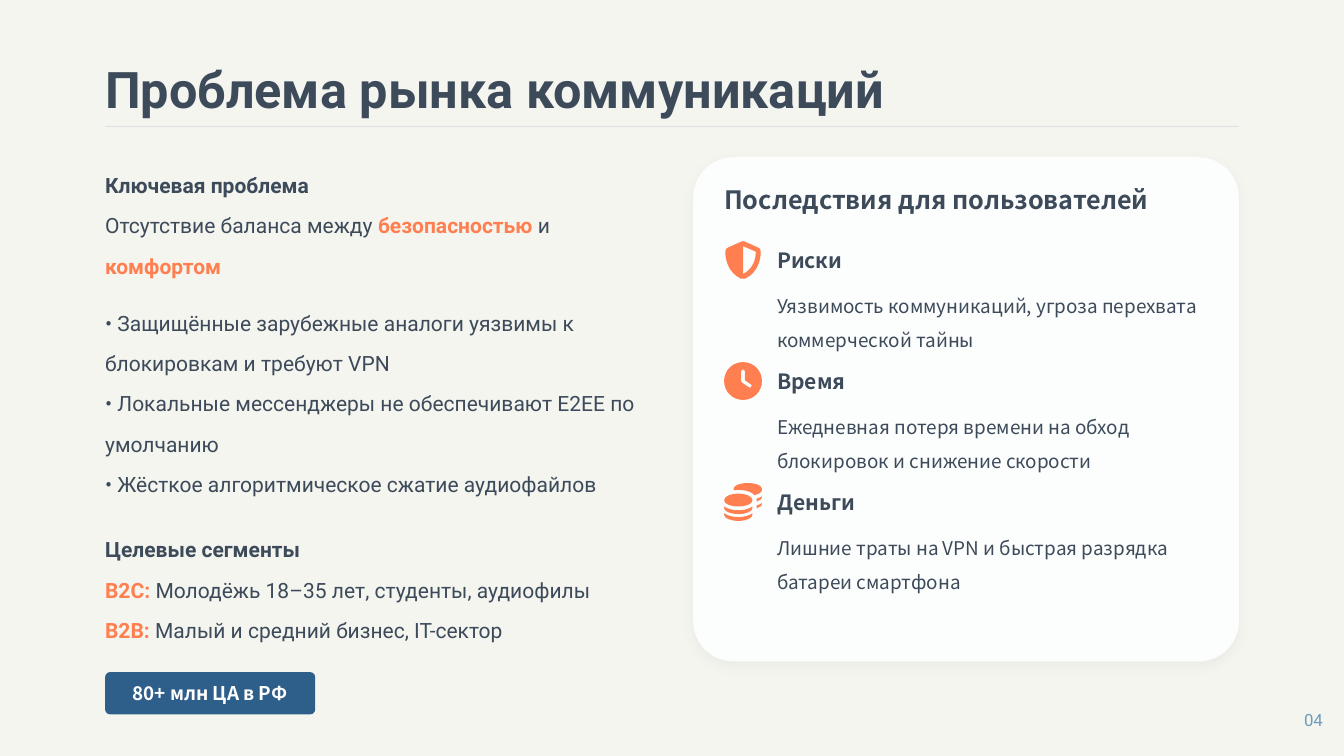
from dataclasses import dataclass

from lxml.etree import SubElement
from pptx import Presentation
from pptx.dml.color import RGBColor as Rgb
from pptx.enum.shapes import MSO_SHAPE as Shape
from pptx.enum.text import MSO_ANCHOR as Anchor, PP_ALIGN as Align
from pptx.oxml.ns import qn
from pptx.util import Inches, Pt


@dataclass(frozen=True)
class Theme:
    """Colours, fonts and type sizes of the deck."""
    back: str = "F5F5F0"
    ink: str = "3C4A5A"
    accent: str = "FF7F50"
    card: str = "FCFDFD"
    rule: str = "D0D6DC"
    badge: str = "2E5E8A"
    page: str = "6B9CBF"
    white: str = "FFFFFF"
    sans: str = "Roboto"
    noto: str = "Noto Sans CJK SC"
    title: int = 48
    head: int = 24
    body: int = 20
    small: int = 18
    foot: int = 16


T = Theme()

BODY = [
    ({}, [("Ключевая проблема", T.ink, True)]),
    ({}, [("Отсутствие баланса между ", T.ink, False), ("безопасностью", T.accent, True),
          (" и ", T.ink, False), ("комфортом", T.accent, True)]),
    ({"space_before": Pt(16)},
     [("• Защищённые зарубежные аналоги уязвимы к блокировкам и требуют VPN", T.ink, False)]),
    ({}, [("• Локальные мессенджеры не обеспечивают E2EE по умолчанию", T.ink, False)]),
    ({}, [("• Жёсткое алгоритмическое сжатие аудиофайлов", T.ink, False)]),
    ({"space_before": Pt(24)}, [("Целевые сегменты", T.ink, True)]),
    ({}, [("B2C:", T.accent, True), (" Молодёжь 18–35 лет, студенты, аудиофилы", T.ink, False)]),
    ({}, [("B2B:", T.accent, True), (" Малый и средний бизнес, IT-сектор", T.ink, False)]),
]

SHIELD = [
    [(50, 0), (52, 0, 53, 1, 54, 1), (90, 17), (94, 18, 97, 22, 97, 28),
     (97, 47, 90, 83, 56, 99), (52, 100, 48, 100, 44, 99), (10, 83, 3, 47, 3, 28),
     (3, 22, 6, 18, 10, 17), (46, 1), (47, 1, 48, 0, 50, 0)],
    [(50, 13), (50, 87), (77, 74, 84, 46, 84, 28), (50, 13)],
]
CLOCK = [
    [(50, 0), (78, 0, 100, 22, 100, 50), (100, 78, 78, 100, 50, 100),
     (22, 100, 0, 78, 0, 50), (0, 22, 22, 0, 50, 0)],
    [(45, 23), (45, 50), (45, 52, 46, 53, 47, 54), (66, 67), (68, 68, 71, 68, 72, 65),
     (74, 63, 73, 60, 71, 59), (55, 48), (55, 23), (55, 21, 53, 19, 50, 19),
     (47, 19, 45, 21, 45, 23)],
]


def band(y):
    """Return the lower rim of a front coin that starts at y."""
    return [(75, y + 4), (75, y + 13, 58, y + 20, 37.5, y + 20),
            (17, y + 20, 0, y + 13, 0, y + 4), (0, y),
            (10, y + 7, 24, y + 10, 37.5, y + 10), (51, y + 10, 65, y + 7, 75, y)]


def edge(y):
    """Return the visible edge of a rear coin that starts at y."""
    return [(86, y + 14), (86, y + 6), (91, y + 5, 96, y + 3, 100, y), (100, y + 3),
            (100, y + 7, 94, y + 12, 86, y + 14)]


COINS = [
    [(25, 19), (25, 16), (25, 6, 41, 0, 62.5, 0), (84, 0, 100, 6, 100, 16), (100, 19),
     (100, 24, 92, 29, 80, 32), (77, 27, 72, 25, 67, 23), (57, 19, 42, 17, 25, 19)],
    *[edge(y) for y in (53, 35)],
    [(0, 46), (0, 35, 17, 28, 37.5, 28), (58, 28, 75, 35, 75, 46),
     (75, 55, 58, 62, 37.5, 62), (17, 62, 0, 55, 0, 46)],
    *[band(y) for y in (62, 80)],
]

RISKS = [
    (SHIELD, "Риски", "Уязвимость коммуникаций, угроза перехвата коммерческой тайны"),
    (CLOCK, "Время", "Ежедневная потеря времени на обход блокировок и снижение скорости"),
    (COINS, "Деньги", "Лишние траты на VPN и быстрая разрядка батареи смартфона"),
]


def tint(fill, color):
    """Make a fill solid."""
    fill.solid()
    fill.fore_color.rgb = Rgb.from_string(color)


def paint(shape, color):
    """Give a shape a flat fill with no line or shadow."""
    shape.shadow.inherit = False
    tint(shape.fill, color)
    shape.line.fill.background()


def write(frame, paras, size, face, anchor=Anchor.TOP, wrap=True, **form):
    """Fill a text frame with formatted paragraphs of (text, colour, bold) runs."""
    zero = dict.fromkeys(("margin_left", "margin_top", "margin_right", "margin_bottom"), 0)
    for key, val in {**zero, "word_wrap": wrap, "vertical_anchor": anchor}.items():
        setattr(frame, key, val)
    for num, (extra, runs) in enumerate(paras):
        para = frame.add_paragraph() if num else frame.paragraphs[0]
        for key, val in {**form, **extra}.items():
            setattr(para, key, val)
        for text, color, bold in runs:
            run = para.add_run()
            run.text = text
            for key, val in {"size": Pt(size), "name": face, "bold": bold}.items():
                setattr(run.font, key, val)
            run.font.color.rgb = Rgb.from_string(color)


def label(slide, box, text, size, face, color=T.ink, bold=False, **form):
    """Add a text box with one run."""
    frame = slide.shapes.add_textbox(*box).text_frame
    write(frame, [({}, [(text, color, bold)])], size, face, **form)


def panel(slide, box, color, turn):
    """Add a plain rounded rectangle."""
    shape = slide.shapes.add_shape(Shape.ROUNDED_RECTANGLE, *box)
    shape.adjustments[0] = turn
    paint(shape, color)
    return shape


def icon(slide, left, top, size, parts):
    """Draw an icon with curved outlines on a grid of 100 units."""
    pen = slide.shapes.build_freeform(0, 0, scale=size / 1000)
    pen.add_line_segments([(1000, 0), (1000, 1000)])
    shape = pen.convert_to_shape(left, top)
    track = next(shape._element.iter(qn("a:path")))
    for node in list(track):
        track.remove(node)
    for part in parts:
        for num, step in enumerate(part):
            kind = "cubicBezTo" if len(step) == 6 else "lnTo" if num else "moveTo"
            node = SubElement(track, qn(f"a:{kind}"))
            for x, y in zip(step[::2], step[1::2]):
                SubElement(node, qn("a:pt"), x=str(round(x * 10)), y=str(round(y * 10)))
        SubElement(track, qn("a:close"))
    paint(shape, T.accent)


def header(slide, left, top, width, height):
    """Place the title and the thin rule below it."""
    label(slide, (left, top, Inches(11.11), Inches(0.69)), "Проблема рынка коммуникаций",
          T.title, T.sans, bold=True, anchor=Anchor.MIDDLE)
    rule = slide.shapes.add_shape(Shape.RECTANGLE, left, top + height, width, Inches(0.01))
    paint(rule, T.rule)


def story(slide, left, top, width, height):
    """Place the problem text and the audience badge under it."""
    frame = slide.shapes.add_textbox(left, top, width, height).text_frame
    write(frame, BODY, T.body, T.sans, line_spacing=1.6)
    box = left, top + height + Inches(0.14), Inches(2.78), Inches(0.56)
    badge = panel(slide, box, T.badge, 0.12)
    write(badge.text_frame, [({}, [("80+ млн ЦА в РФ", T.white, True)])], T.small, T.noto,
          anchor=Anchor.MIDDLE, wrap=False, alignment=Align.CENTER)


def risks(slide, left, top, width, height):
    """Place the card with its heading and one row per consequence."""
    card = panel(slide, (left, top, width, height), T.card, 0.08)
    glow = SubElement(card._element.spPr.find(qn("a:effectLst")), qn("a:outerShdw"),
                      blurRad=str(Pt(12)), dist=str(Pt(4)), dir="5400000", rotWithShape="0")
    black = SubElement(glow, qn("a:srgbClr"), val="000000")
    SubElement(black, qn("a:alpha"), val="3000")
    x, size, inset = left + Inches(0.41), Inches(0.5), Inches(0.7)
    wide = width - Inches(0.83)
    label(slide, (x, top + Inches(0.28), wide, Inches(0.56)), "Последствия для пользователей",
          T.head, T.noto, bold=True, anchor=Anchor.MIDDLE)
    for num, (parts, name, text) in enumerate(RISKS):
        y = top + Inches(1.11) + num * Inches(1.6)
        icon(slide, x, y, size, parts)
        label(slide, (x + inset, y, wide - inset, size), name, T.body, T.noto, bold=True,
              anchor=Anchor.MIDDLE)
        label(slide, (x + inset, y + Inches(0.56), wide - inset, Inches(0.9)), text,
              T.small, T.noto, line_spacing=1.5)


def footer(slide, *box):
    """Place the page number."""
    label(slide, box, "04", T.foot, T.sans, T.page, anchor=Anchor.MIDDLE, alignment=Align.RIGHT)


def main():
    """Build and save the deck."""
    deck = Presentation()
    deck.slide_width, deck.slide_height = Inches(17.78), Inches(10)
    slide = deck.slides.add_slide(deck.slide_layouts[6])
    tint(slide.background.fill, T.back)
    for place, box in ((header, (1.39, 0.83, 15, 0.84)), (story, (1.39, 2.08, 7.22, 6.67)),
                       (risks, (9.17, 2.08, 7.22, 6.67)), (footer, (16.39, 9.31, 1.11, 0.42))):
        place(slide, *map(Inches, box))
    deck.save("out.pptx")


if __name__ == "__main__":
    main()
